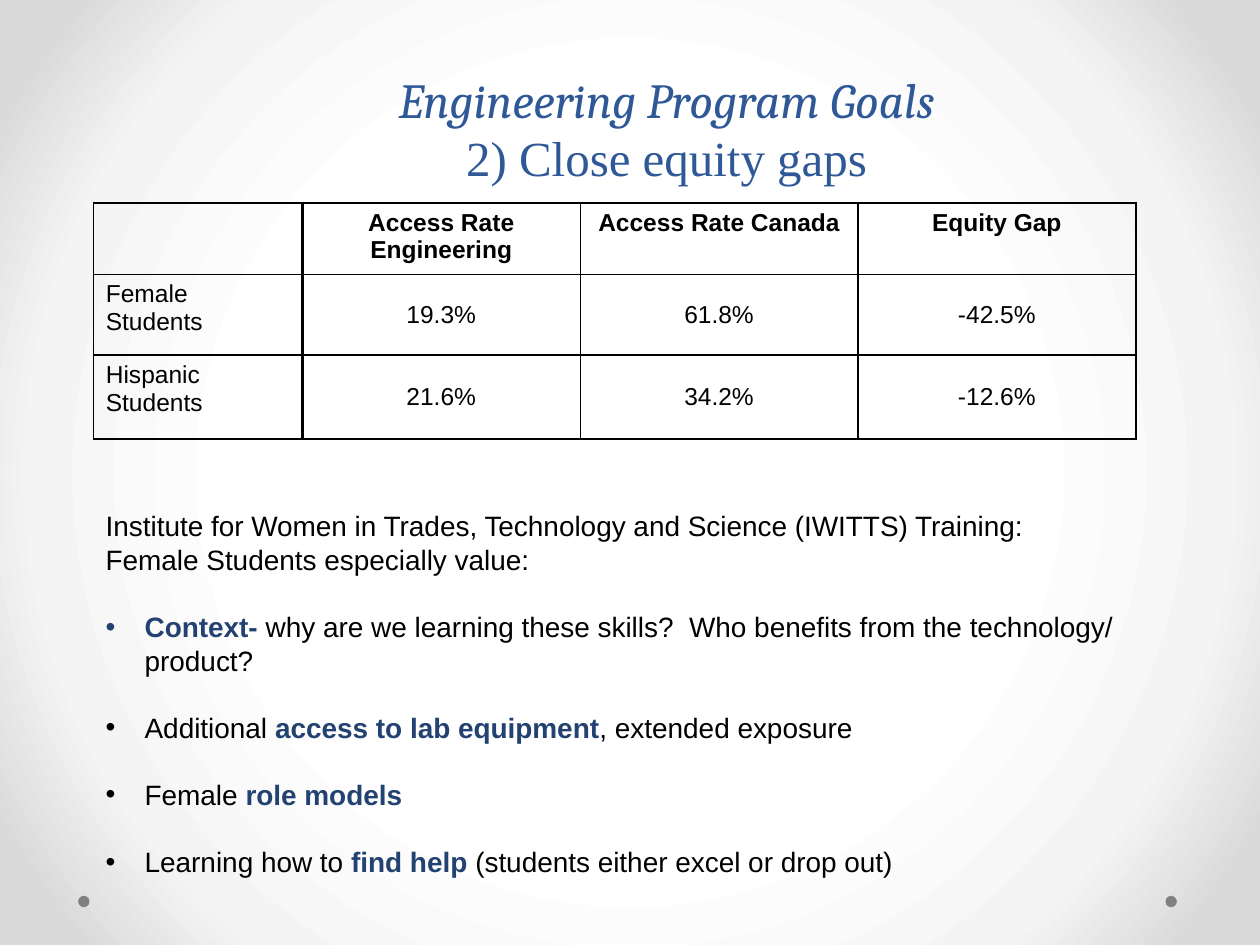
"""Build the slide on closing equity gaps in the engineering program."""
from lxml import etree
from pptx import Presentation, util as u
from pptx.dml.color import RGBColor
from pptx.enum import shapes, text
from pptx.oxml import parse_xml
from pptx.oxml.ns import nsdecls, qn

COLORS = {
    "title": "2F5897", "accent": "234271", "ink": "000000", "dot": "808080",
    "center": "FFFFFF", "middle": "F4F4F4", "edge": "DADADA",
}

presentation = Presentation()
presentation.slide_width, presentation.slide_height = u.Inches(10), u.Inches(7.5)
slide = presentation.slides.add_slide(presentation.slide_layouts[6])
column = presentation.slide_width / 100
row = presentation.slide_height / 75


def place(left, top, width, height):
    return [int(length) for length in (left * column, top * row, width * column, height * row)]


def write(paragraph, words, font="Arial", size=16, color="ink", bold=False, italic=False, align="LEFT"):
    paragraph.alignment = getattr(text.PP_ALIGN, align)
    run = paragraph.add_run()
    run.text = words
    run.font.name, run.font.size = font, u.Pt(size)
    run.font.bold, run.font.italic = bold, italic
    run.font.color.rgb = RGBColor.from_string(COLORS[color])


slide.background.fill.gradient()
gradient = slide.element.find(".//" + qn("a:gradFill"))
stops = "".join(
    f'<a:gs pos="{share * 1000}"><a:srgbClr val="{COLORS[name]}"/></a:gs>'
    for share, name in ((50, "center"), (76, "middle"), (92, "edge"))
)
gradient.getparent().replace(gradient, parse_xml(
    f'<a:gradFill {nsdecls("a")} rotWithShape="1"><a:gsLst>{stops}</a:gsLst><a:path path="circle">'
    '<a:fillToRect l="50000" t="50000" r="50000" b="50000"/></a:path></a:gradFill>'
))

for left in (92.5, 6.2):
    dot = slide.shapes.add_shape(shapes.MSO_SHAPE.OVAL, *place(left, 71.1, 0.9, 0.9))
    dot.shadow.inherit = False
    dot.fill.solid()
    dot.fill.fore_color.rgb = RGBColor.from_string(COLORS["dot"])
    dot.line.fill.background()

title = slide.shapes.add_textbox(*place(10, 5, 85.8, 8.4)).text_frame
title.word_wrap = True
write(title.paragraphs[0], "Engineering Program Goals", font="Cambria", size=28,
      color="title", italic=True, align="CENTER")
write(title.add_paragraph(), "2) Close equity gaps", font="Times New Roman", size=28,
      color="title", align="CENTER")

rates = [
    ["", "Access Rate Engineering", "Access Rate Canada", "Equity Gap"],
    ["Female Students", "19.3%", "61.8%", "-42.5%"],
    ["Hispanic Students", "21.6%", "34.2%", "-12.6%"],
]
column_shares, row_shares = [16.6, 22.05, 22.05, 22.05], [4.9, 6.4, 6.7]
table = slide.shapes.add_table(
    3, 4, *place(7.4, 16.1, sum(column_shares), sum(row_shares))).table
table.first_row = table.horz_banding = False
for table_column, share in zip(table.columns, column_shares):
    table_column.width = int(share * column)
for table_row, share in zip(table.rows, row_shares):
    table_row.height = int(share * row)

for r, record in enumerate(rates):
    for c, words in enumerate(record):
        cell = table.cell(r, c)
        cell.fill.background()
        if r and c:
            cell.vertical_anchor = text.MSO_ANCHOR.MIDDLE
        if words:
            write(cell.text_frame.paragraphs[0], words, size=14, bold=r == 0,
                  align="CENTER" if c else "LEFT")
        heavy = {"L": c == 1, "R": c in (0, 3), "T": r == 0, "B": r == 2}
        for position, (side, is_heavy) in enumerate(heavy.items()):
            points = 1.5 if is_heavy else 0.75
            cell._tc.get_or_add_tcPr().insert(position, parse_xml(
                f'<a:ln{side} {nsdecls("a")} w="{u.Pt(points)}"><a:solidFill>'
                f'<a:srgbClr val="{COLORS["ink"]}"/></a:solidFill></a:ln{side}>'
            ))

intro = [
    "Institute for Women in Trades, Technology and Science (IWITTS) Training:",
    "Female Students especially value:",
]
values = [
    ("", "Context- ", "why are we learning these skills?  Who benefits from the technology/ product?"),
    ("Additional ", "access to lab equipment", ", extended exposure"),
    ("Female ", "role models", ""),
    ("Learning how to ", "find help ", "(students either excel or drop out)"),
]
line_height = u.Pt(19.2)
body = slide.shapes.add_textbox(*place(7.4, 39.9, 82.7, 30.6)).text_frame
body.word_wrap = True
for index, words in enumerate(intro):
    paragraph = body.add_paragraph() if index else body.paragraphs[0]
    paragraph.line_spacing = line_height
    write(paragraph, words)
for before, emphasis, after in values:
    paragraph = body.add_paragraph()
    paragraph.line_spacing = paragraph.space_before = line_height
    properties = paragraph._p.get_or_add_pPr()
    properties.set("marL", str(int(3.1 * column)))
    properties.set("indent", str(int(-3.1 * column)))
    etree.SubElement(properties, qn("a:buFont"), typeface="Arial")
    etree.SubElement(properties, qn("a:buChar"), char="•")
    for words, is_accent in ((before, False), (emphasis, True), (after, False)):
        if words:
            write(paragraph, words, color="accent" if is_accent else "ink", bold=is_accent)

presentation.save("out.pptx")
